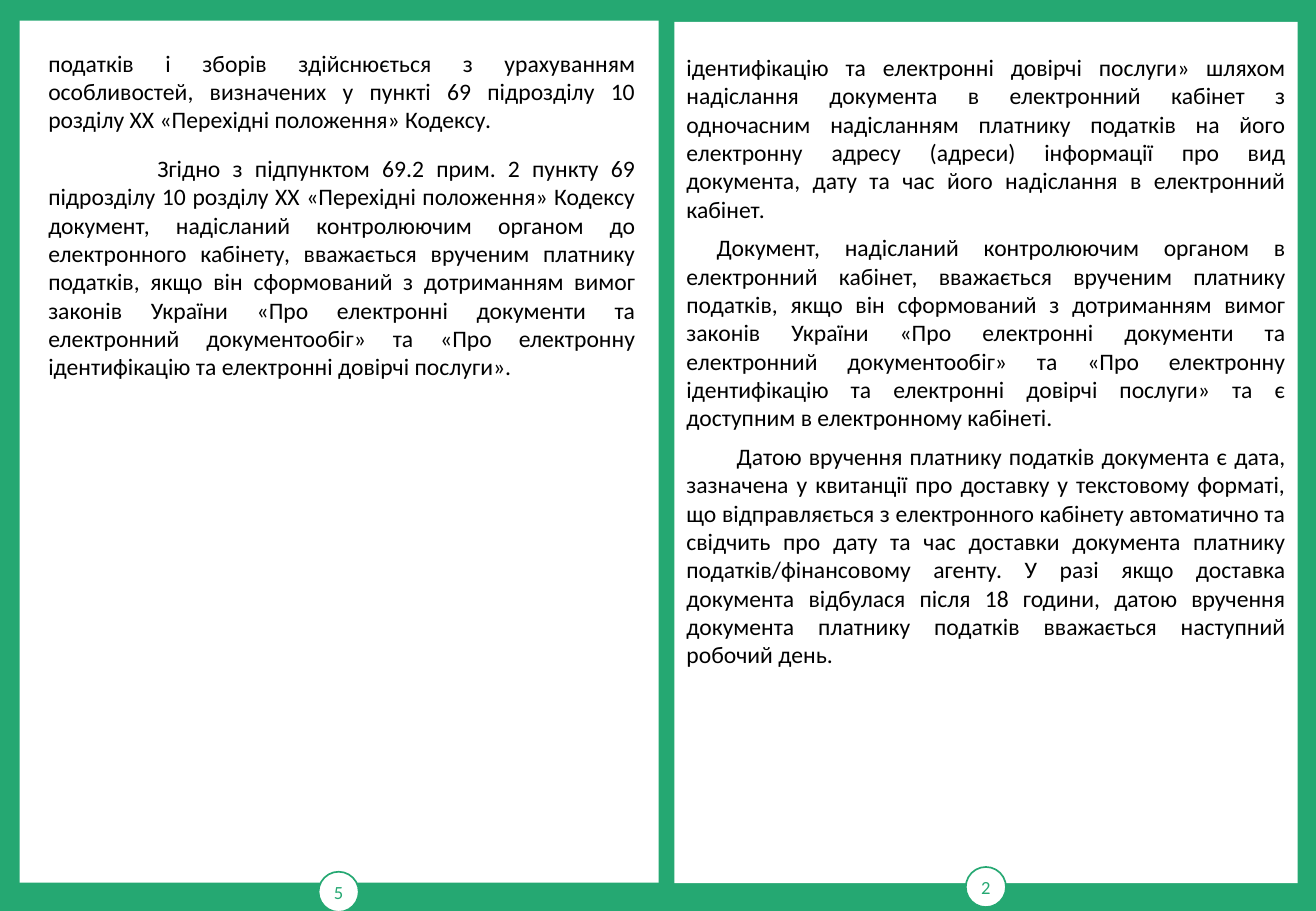
from pptx import Presentation
from pptx.dml.color import RGBColor
from pptx.enum import shapes, text
from pptx.util import Cm, Pt

GREEN = RGBColor(0x25, 0xA8, 0x72)
WHITE = RGBColor(0xFF, 0xFF, 0xFF)
BLACK = RGBColor(0, 0, 0)
FONT = "Calibri"
BADGE = 0.84  # diameter of the page number circle, cm

# Content: boxes are (left, top, width, height) in cm;
# paragraphs are (first line indent in cm, space before in pt, text)
PAGES = [
    {
        "number": "5",
        "sheet": (0.41, 0.43, 13.36, 18.03),
        "badge_centre": (7.08, 18.65),
        "body": (0.76, 0.89, 12.78, 9.65),
        "paragraphs": [
            (0, 0, "податків і зборів здійснюється з урахуванням особливостей, "
                   "визначених у пункті 69 підрозділу 10 розділу XX «Перехідні "
                   "положення» Кодексу."),
            (2.28, 12, "Згідно з підпунктом 69.2 прим. 2 пункту 69 підрозділу 10 "
                       "розділу XX «Перехідні положення» Кодексу документ, надісланий "
                       "контролюючим органом до електронного кабінету, вважається "
                       "врученим платнику податків, якщо він сформований з дотриманням "
                       "вимог законів України «Про електронні документи та електронний "
                       "документообіг» та «Про електронну ідентифікацію та електронні "
                       "довірчі послуги»."),
        ],
    },
    {
        "number": "2",
        "sheet": (14.1, 0.46, 13.03, 18.01),
        "badge_centre": (20.61, 18.55),
        "body": (14.1, 0.98, 13.03, 17.3),
        "paragraphs": [
            (0, 0, "ідентифікацію та електронні довірчі послуги» шляхом надіслання "
                   "документа в електронний кабінет з одночасним надісланням платнику "
                   "податків на його електронну адресу (адреси) інформації про вид "
                   "документа, дату та час його надіслання в електронний кабінет."),
            (0.63, 6, "Документ, надісланий контролюючим органом в електронний кабінет, "
                      "вважається врученим платнику податків, якщо він сформований з "
                      "дотриманням вимог законів України «Про електронні документи та "
                      "електронний документообіг» та «Про електронну ідентифікацію та "
                      "електронні довірчі послуги» та є доступним в електронному кабінеті."),
            (1.05, 6, "Датою вручення платнику податків документа є дата, зазначена у "
                      "квитанції про доставку у текстовому форматі, що відправляється з "
                      "електронного кабінету автоматично та свідчить про дату та час "
                      "доставки документа платнику податків/фінансовому агенту. У разі "
                      "якщо доставка документа відбулася після 18 години, датою вручення "
                      "документа платнику податків вважається наступний робочий день."),
        ],
    },
]

BODY_FORMAT = {"name": FONT, "size": Pt(14)}
NUMBER_FORMAT = {"name": FONT, "size": Pt(11)}
BADGE_FRAME = {"margin_left": 0, "margin_right": 0, "margin_top": 0,
               "margin_bottom": 0, "word_wrap": False,
               "vertical_anchor": text.MSO_ANCHOR.MIDDLE}


def apply(target, formats):
    for key, value in formats.items():
        setattr(target, key, value)


def write(paragraph, words, formats, colour, alignment):
    paragraph.alignment = alignment
    run = paragraph.add_run()
    run.text = words
    apply(run.font, formats)
    run.font.color.rgb = colour


def add_white(slide, kind, box):
    panel = slide.shapes.add_shape(kind, *map(Cm, box))
    panel.shadow.inherit = False
    panel.fill.solid()
    panel.fill.fore_color.rgb = WHITE
    panel.line.fill.background()
    return panel


def add_page(slide, page):
    # White sheet
    add_white(slide, shapes.MSO_SHAPE.RECTANGLE, page["sheet"])

    # Page number
    x, y = page["badge_centre"]
    badge = add_white(slide, shapes.MSO_SHAPE.OVAL,
                      (x - BADGE / 2, y - BADGE / 2, BADGE, BADGE))
    badge.line.color.rgb = GREEN
    badge.line.width = Pt(1)
    apply(badge.text_frame, BADGE_FRAME)
    write(badge.text_frame.paragraphs[0], page["number"], NUMBER_FORMAT,
          GREEN, text.PP_ALIGN.CENTER)

    # Body text
    body = slide.shapes.add_textbox(*map(Cm, page["body"])).text_frame
    body.word_wrap = True
    for i, (indent, before, words) in enumerate(page["paragraphs"]):
        paragraph = body.add_paragraph() if i else body.paragraphs[0]
        paragraph.space_before = Pt(before)
        paragraph._p.get_or_add_pPr().set("indent", str(Cm(indent)))
        write(paragraph, words, BODY_FORMAT, BLACK, text.PP_ALIGN.JUSTIFY)


def main():
    deck = Presentation()
    deck.slide_width, deck.slide_height = Cm(27.51), Cm(19.05)
    slide = deck.slides.add_slide(deck.slide_layouts[6])
    slide.background.fill.solid()
    slide.background.fill.fore_color.rgb = GREEN
    for page in PAGES:
        add_page(slide, page)
    deck.save("out.pptx")


if __name__ == "__main__":
    main()
